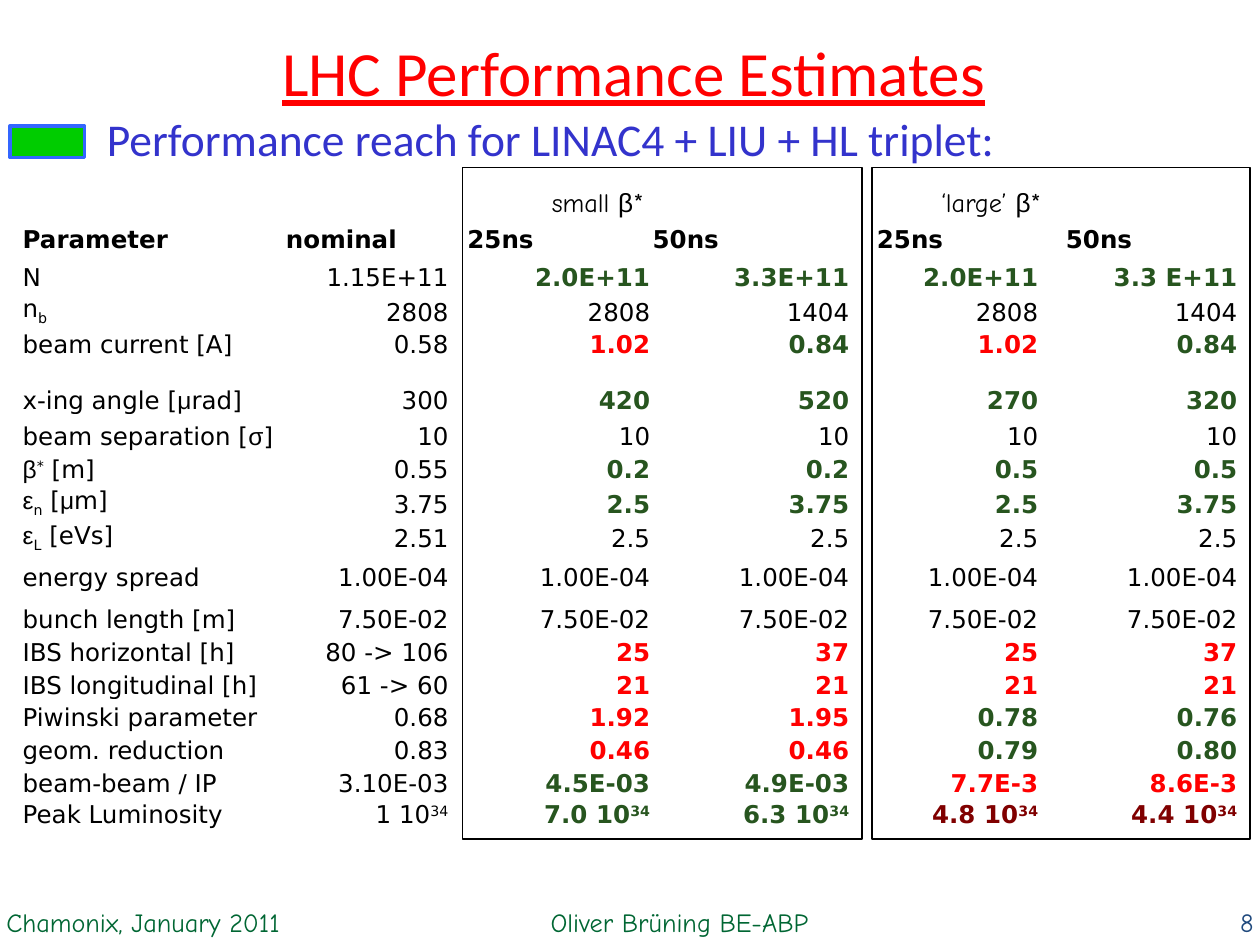
from lxml import etree
from pptx import Presentation
from pptx.dml.color import RGBColor
from pptx.enum.shapes import MSO_SHAPE
from pptx.enum.text import MSO_ANCHOR, MSO_AUTO_SIZE, PP_ALIGN
from pptx.oxml.ns import qn
from pptx.util import Inches, Pt

RECT = MSO_SHAPE.RECTANGLE
LEFT, CENTER, RIGHT = PP_ALIGN.LEFT, PP_ALIGN.CENTER, PP_ALIGN.RIGHT
MIDDLE, BOTTOM = MSO_ANCHOR.MIDDLE, MSO_ANCHOR.BOTTOM
FIT_SHAPE = MSO_AUTO_SIZE.SHAPE_TO_FIT_TEXT

COLORS = {
    "black": "000000", "red": "FF0000", "green": "27551F", "maroon": "800000",
    "footer": "006633", "number": "1F497D", "heading": "3333CC",
    "marker": "00CC00", "marker_line": "3366FF",
}
CODES = {"k": "black", "r": "red", "g": "green", "m": "maroon"}
BASELINES = {"_": "-25000", "^": "30000"}
GREEK = "βεμσ"

COL_WIDTHS = [2.09, 1.31, 1.6, 1.58, 1.5, 1.58]
HEADERS = ["Parameter", "nominal", "25ns", "50ns", "25ns", "50ns"]
HEADER_INDENTS = [0.01, 0.01, 0.14, 0.01, 0.21, 0.21]
HEADER_HEIGHT = 0.44
ROWS = [
    (0.3, "N", "1.15E+11", "2.0E+11", "3.3E+11", "2.0E+11", "3.3 E+11", "gggg"),
    (0.26, "n|_b", "2808", "2808", "1404", "2808", "1404", "kkkk"),
    (0.26, "beam current [A]", "0.58", "1.02", "0.84", "1.02", "0.84", "rgrg"),
    (0.44, "x-ing angle [|μ|rad]", "300", "420", "520", "270", "320", "gggg"),
    (0.29, "beam separation [|σ|]", "10", "10", "10", "10", "10", "kkkk"),
    (0.26, "β|^*| [m]", "0.55", "0.2", "0.2", "0.5", "0.5", "gggg"),
    (0.26, "ε|_n| [|μ|m]", "3.75", "2.5", "3.75", "2.5", "3.75", "gggg"),
    (0.26, "ε|_L| [eVs]", "2.51", "2.5", "2.5", "2.5", "2.5", "kkkk"),
    (0.31, "energy spread", *["1.00E-04"] * 5, "kkkk"),
    (0.33, "bunch length [m]", *["7.50E-02"] * 5, "kkkk"),
    (0.26, "IBS horizontal [h]", "80 -> 106", "25", "37", "25", "37", "rrrr"),
    (0.26, "IBS longitudinal [h]", "61 -> 60", "21", "21", "21", "21", "rrrr"),
    (0.26, "Piwinski parameter", "0.68", "1.92", "1.95", "0.78", "0.76", "rrgg"),
    (0.26, "geom. reduction", "0.83", "0.46", "0.46", "0.79", "0.80", "rrgg"),
    (0.26, "beam-beam / IP", "3.10E-03", "4.5E-03", "4.9E-03", "7.7E-3", "8.6E-3", "ggrr"),
    (0.25, "Peak Luminosity", "1 10|^34", "7.0 10|^34", "6.3 10|^34",
     "4.8 10|^34", "4.4 10|^34", "ggmm"),
]


class SlideBuilder:
    """Adds styled elements to one slide; '|' splits runs, '_' lowers and '^' raises one."""

    def __init__(self, slide):
        self.slide = slide

    def color(self, name):
        return RGBColor.from_string(COLORS[name])

    def add_runs(self, p, text, size, font, color, bold=False, align=LEFT):
        p.alignment = align
        for part in text.split("|"):
            r = p.add_run()
            r.text = part.lstrip("_^")
            r.font.size = Pt(size)
            r.font.name = "Arial" if part in GREEK else font
            r.font.bold = bold
            r.font.color.rgb = self.color(color)
            if part[0] in BASELINES:
                r.font._element.set("baseline", BASELINES[part[0]])

    def title(self, text, left, top, width, height):
        s = self.slide.shapes.title
        s.left, s.top, s.width, s.height = map(Inches, (left, top, width, height))
        s.text_frame.vertical_anchor = MIDDLE
        p = s.text_frame.paragraphs[0]
        self.add_runs(p, text, 36, "Calibri", "red", align=CENTER)
        p.runs[0].font.underline = True

    def text(self, text, left, top, width, height, color="black", size=15,
             font="Comic Neue", align=LEFT, inset=0.05, wrap=True, group=None):
        shapes = (group or self.slide).shapes
        tf = shapes.add_textbox(*map(Inches, (left, top, width, height))).text_frame
        tf.word_wrap = wrap
        tf.auto_size = FIT_SHAPE
        tf.margin_left = tf.margin_right = Inches(inset)
        tf.margin_top = tf.margin_bottom = Inches(0.02 if inset < 0.1 else 0.05)
        self.add_runs(tf.paragraphs[0], text, size, font, color, align=align)
        return tf

    def tab_stop(self, p, position):
        tabs = etree.SubElement(p._p.get_or_add_pPr(), qn("a:tabLst"))
        etree.SubElement(tabs, qn("a:tab"), pos=str(Inches(position)), algn="l")

    def rect(self, left, top, width, height, line, line_width, fill=None, group=None):
        shapes = (group or self.slide).shapes
        s = shapes.add_shape(RECT, *map(Inches, (left, top, width, height)))
        s.shadow.inherit = False
        if fill:
            s.fill.solid()
            s.fill.fore_color.rgb = self.color(fill)
        else:
            s.fill.background()
        s.line.color.rgb = self.color(line)
        s.line.width = Pt(line_width)

    def cell(self, cell, text, color="black", bold=False, align=LEFT, indent=0.01):
        cell.fill.background()
        cell.vertical_anchor = BOTTOM
        cell.margin_left = Inches(indent)
        cell.margin_right = cell.margin_top = Inches(0.01)
        cell.margin_bottom = 0
        p = cell.text_frame.paragraphs[0]
        self.add_runs(p, text, 14, "DejaVu Sans", color, bold, align)

    def table(self, left, top):
        heights = [HEADER_HEIGHT] + [row[0] for row in ROWS]
        size = left, top, sum(COL_WIDTHS), sum(heights)
        table = self.slide.shapes.add_table(
            len(heights), len(COL_WIDTHS), *map(Inches, size)).table
        table.first_row = table.horz_banding = False
        for column, width in zip(table.columns, COL_WIDTHS):
            column.width = Inches(width)
        for row, height in zip(table.rows, heights):
            row.height = Inches(height)
        for c, (header, indent) in enumerate(zip(HEADERS, HEADER_INDENTS)):
            self.cell(table.cell(0, c), header, bold=True, indent=indent)
        for i, (_, *values, codes) in enumerate(ROWS, 1):
            for c, (value, code) in enumerate(zip(values, "kk" + codes)):
                self.cell(table.cell(i, c), value, CODES[code], code != "k",
                          RIGHT if c else LEFT)


def main():
    prs = Presentation()
    prs.slide_width, prs.slide_height = Inches(10), Inches(7.5)
    slide = prs.slides.add_slide(prs.slide_layouts[5])
    b = SlideBuilder(slide)

    b.title("LHC Performance Estimates", 0.53, 0.17, 9, 0.79)
    b.text("8", 6.33, 7.17, 3.67, 0.29, "number", align=RIGHT)
    footer = b.text("Chamonix, January 2011\tOliver Brüning BE-ABP",
                    0, 7.17, 7.33, 0.29, "footer")
    b.tab_stop(footer.paragraphs[0], 4.32)

    b.table(0.17, 1.58)
    b.text("small |β|*", 4.33, 1.46, 2.33, 0.29)
    b.text("‘large’ |β|*", 7.42, 1.46, 2.33, 0.29)
    for left, width in ((3.67, 3.17), (6.92, 3)):
        b.rect(left, 1.33, width, 5.33, "black", 1)

    heading = slide.shapes.add_group_shape()
    b.rect(0.08, 1, 0.59, 0.25, "marker_line", 2, "marker", heading)
    b.text("Performance reach for LINAC4 + LIU + HL triplet:", 0.75, 0.83, 7.77, 0.54,
           "heading", 26, "Calibri", inset=0.1, wrap=False, group=heading)
    prs.save("out.pptx")


if __name__ == "__main__":
    main()
